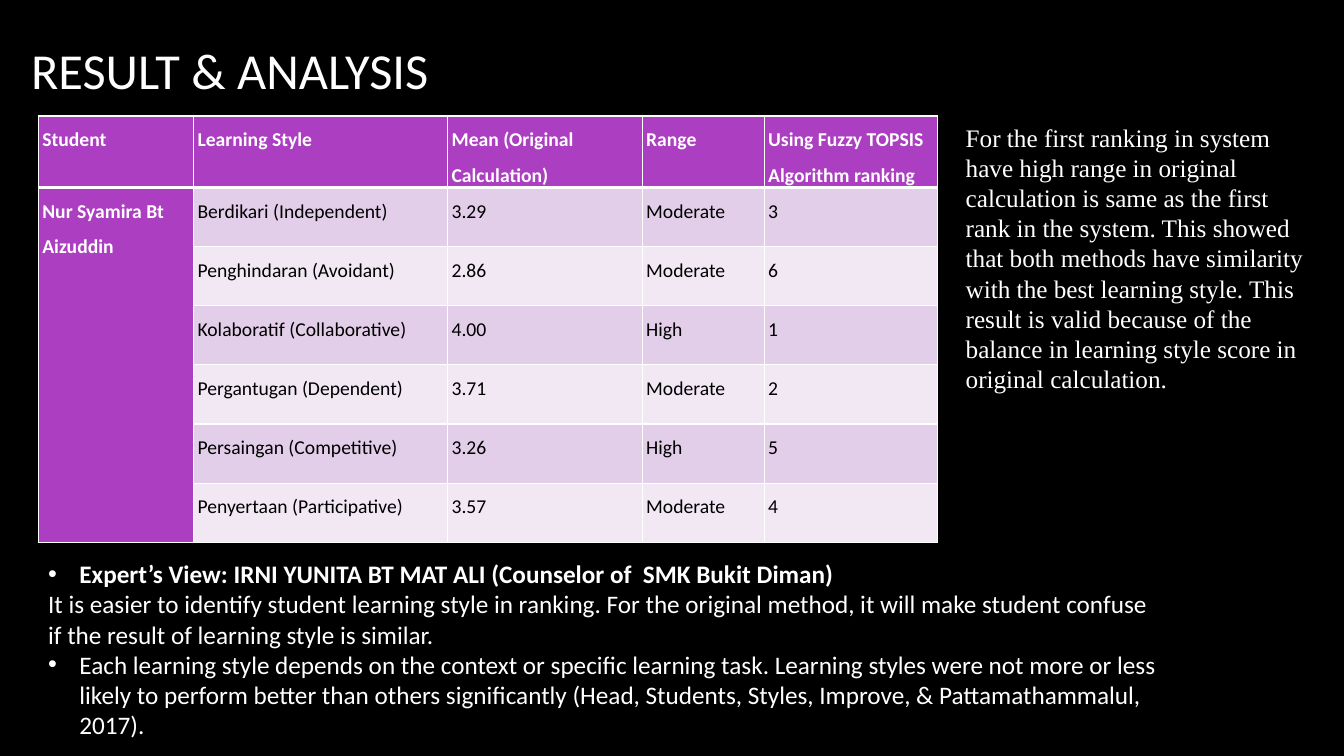
import dataclasses
import pptx
import pptx.util
import pptx.dml.color
import pptx.enum.text
import pptx.oxml.ns
import lxml.etree

Inches = pptx.util.Inches
Pt = pptx.util.Pt
RGB = pptx.dml.color.RGBColor.from_string
qn = pptx.oxml.ns.qn


@dataclasses.dataclass(frozen=True)
class Theme:
    background: str = "000000"
    light: str = "FFFFFF"
    dark: str = "000000"
    accent: str = "AC3EC1"
    bands: tuple = ("E3CEE9", "F1E8F4")
    sans: str = "Calibri"
    serif: str = "Times New Roman"
    title_size: int = 36
    body_size: int = 18
    table_size: int = 14


THEME = Theme()

TITLE = "RESULT & ANALYSIS"
HEADERS = ["Student", "Learning Style", "Mean (Original Calculation)", "Range",
           "Using Fuzzy TOPSIS Algorithm ranking"]
STUDENT = "Nur Syamira Bt Aizuddin"
RESULTS = [
    ("Berdikari (Independent)", "3.29", "Moderate", "3"),
    ("Penghindaran (Avoidant)", "2.86", "Moderate", "6"),
    ("Kolaboratif (Collaborative)", "4.00", "High", "1"),
    ("Pergantugan (Dependent)", "3.71", "Moderate", "2"),
    ("Persaingan (Competitive)", "3.26", "High", "5"),
    ("Penyertaan (Participative)", "3.57", "Moderate", "4"),
]
COLUMN_WIDTHS = [1.54, 2.52, 1.93, 1.21, 1.72]
HEADER_HEIGHT = 0.71
FINDING = (
    "For the first ranking in system have high range in original calculation is same "
    "as the first rank in the system. This showed that both methods have similarity "
    "with the best learning style. This result is valid because of the balance in "
    "learning style score in original calculation."
)
EXPERT_VIEW = [
    ("Expert’s View: IRNI YUNITA BT MAT ALI (Counselor of  SMK Bukit Diman)", True, True),
    ("It is easier to identify student learning style in ranking. For the original "
     "method, it will make student confuse if the result of learning style is similar.",
     False, False),
    ("Each learning style depends on the context or specific learning task. Learning "
     "styles were not more or less likely to perform better than others significantly "
     "(Head, Students, Styles, Improve, & Pattamathammalul, 2017).", True, False),
]


def write(p, text, size, color, font, bold=False):
    p.text = text
    for r in p.runs:
        r.font.size = Pt(size)
        r.font.name = font
        r.font.bold = bold
        r.font.color.rgb = RGB(color)


def add_bullet(p, indent):
    pPr = p._p.get_or_add_pPr()
    pPr.set("marL", str(Inches(indent)))
    pPr.set("indent", str(-Inches(indent)))
    lxml.etree.SubElement(pPr, qn("a:buFont")).set("typeface", "Arial")
    lxml.etree.SubElement(pPr, qn("a:buChar")).set("char", "•")


def set_borders(cell, bottom):
    tcPr = cell._tc.get_or_add_tcPr()
    for i, (side, width) in enumerate([("L", 1), ("R", 1), ("T", 1), ("B", bottom)]):
        ln = lxml.etree.Element(qn(f"a:ln{side}"), w=str(Pt(width)))
        fill = lxml.etree.SubElement(ln, qn("a:solidFill"))
        lxml.etree.SubElement(fill, qn("a:srgbClr")).set("val", THEME.light)
        tcPr.insert(i, ln)


def add_text_frame(s, box):
    tf = s.shapes.add_textbox(*map(Inches, box)).text_frame
    tf.word_wrap = True
    return tf


def add_title(s, box):
    tf = add_text_frame(s, box)
    tf.vertical_anchor = pptx.enum.text.MSO_ANCHOR.MIDDLE
    write(tf.paragraphs[0], TITLE, THEME.title_size, THEME.light, THEME.sans)


def add_results_table(s, box):
    rows = [HEADERS] + [("", *result) for result in RESULTS]
    table = s.shapes.add_table(len(rows), len(HEADERS), *map(Inches, box)).table
    for column, width in zip(table.columns, COLUMN_WIDTHS):
        column.width = Inches(width)
    row_height = (box[3] - HEADER_HEIGHT) / len(RESULTS)
    for i, values in enumerate(rows):
        table.rows[i].height = Inches(row_height if i else HEADER_HEIGHT)
        for j, value in enumerate(values):
            cell = table.cell(i, j)
            heading = i == 0 or j == 0
            cell.margin_left = cell.margin_right = Inches(0.04)
            cell.margin_top = cell.margin_bottom = 0
            cell.fill.solid()
            cell.fill.fore_color.rgb = RGB(THEME.accent if heading else THEME.bands[(i - 1) % 2])
            set_borders(cell, 1 if i else 3)
            p = cell.text_frame.paragraphs[0]
            p.line_spacing = 1.5
            write(p, STUDENT if (i, j) == (1, 0) else value, THEME.table_size,
                  THEME.light if heading else THEME.dark, THEME.sans, heading)
    table.cell(1, 0).merge(table.cell(len(RESULTS), 0))


def add_finding(s, box):
    tf = add_text_frame(s, box)
    write(tf.paragraphs[0], FINDING, THEME.body_size, THEME.light, THEME.serif)


def add_expert_view(s, box):
    tf = add_text_frame(s, box)
    for i, (text, bulleted, bold) in enumerate(EXPERT_VIEW):
        p = tf.add_paragraph() if i else tf.paragraphs[0]
        write(p, text, THEME.body_size, THEME.light, THEME.sans, bold)
        if bulleted:
            add_bullet(p, 0.31)


def main():
    prs = pptx.Presentation()
    prs.slide_width, prs.slide_height = Inches(13.33), Inches(7.5)
    s = prs.slides.add_slide(prs.slide_layouts[6])
    s.background.fill.solid()
    s.background.fill.fore_color.rgb = RGB(THEME.background)
    add_title(s, (0.21, 0.21, 11.08, 0.95))
    add_results_table(s, (0.38, 1.15, 8.92, 4.23))
    add_expert_view(s, (0.38, 5.49, 11.23, 2.22))
    add_finding(s, (9.48, 1.16, 3.64, 2.83))
    prs.save("out.pptx")


if __name__ == "__main__":
    main()
